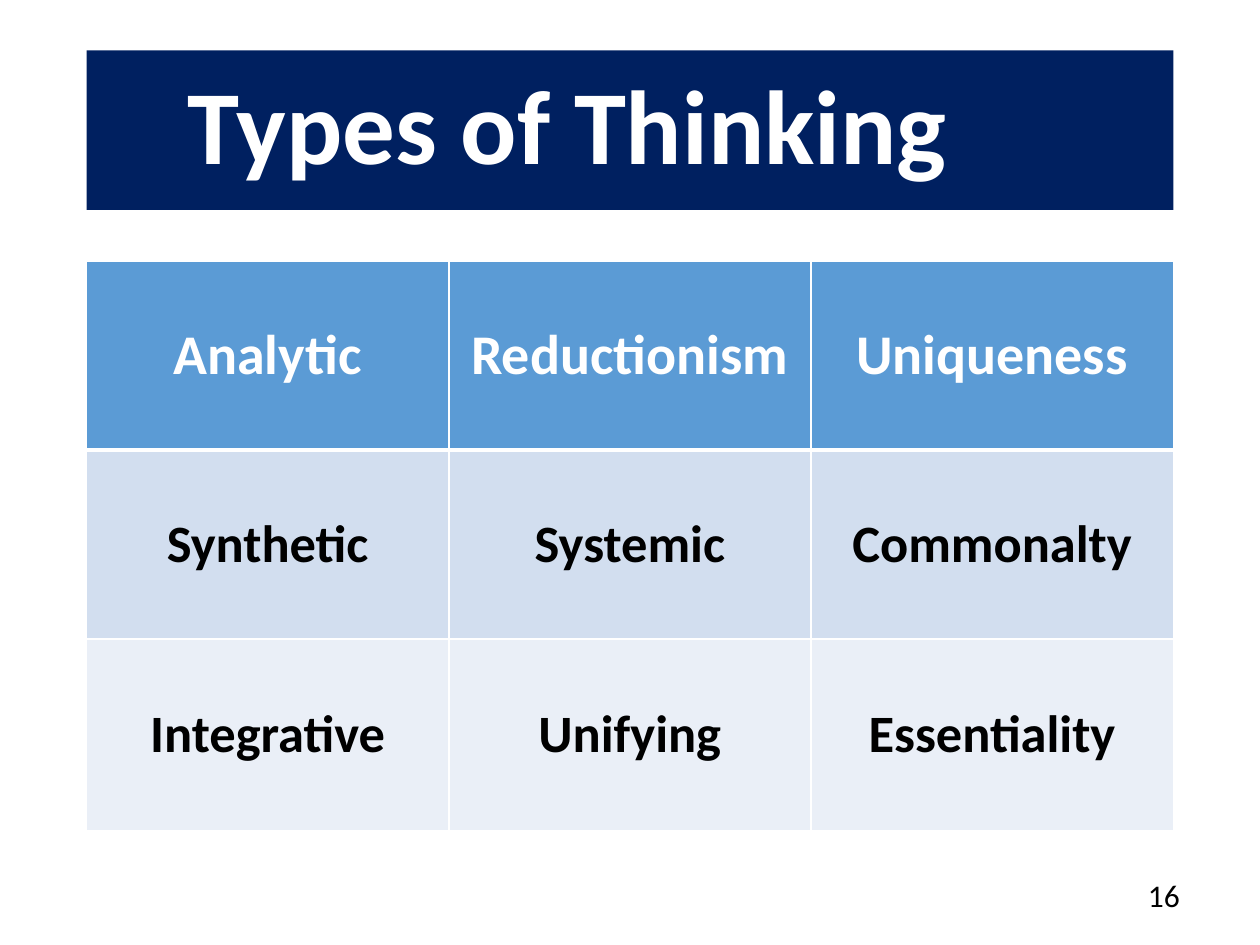
from lxml.etree import SubElement
from pptx import Presentation
from pptx.dml.color import RGBColor
from pptx.enum.shapes import MSO_SHAPE
from pptx.enum.text import MSO_ANCHOR, PP_ALIGN
from pptx.oxml.ns import qn
from pptx.util import Pt

TITLE = "Types of Thinking"
ROWS = [
    ("Analytic", "Reductionism", "Uniqueness"),
    ("Synthetic", "Systemic", "Commonalty"),
    ("Integrative", "Unifying", "Essentiality"),
]
PAGE_NUMBER = "16"

FONT = "Calibri"
NAVY = RGBColor(0x00, 0x20, 0x60)
BLUE = RGBColor(0x5B, 0x9B, 0xD5)
LIGHT_BLUE = RGBColor(0xD2, 0xDE, 0xEF)
PALE_BLUE = RGBColor(0xEA, 0xEF, 0xF7)
WHITE = RGBColor(0xFF, 0xFF, 0xFF)
BLACK = RGBColor(0x00, 0x00, 0x00)

ROW_STYLES = [
    (108, BLUE, WHITE, 32, 3),
    (108, LIGHT_BLUE, BLACK, 30, 1),
    (109.5, PALE_BLUE, BLACK, 30, 1),
]
LEFT, WIDTH = 49.5, 621


def write(text_frame, text, size, color, bold, alignment):
    text_frame.text = text
    paragraph = text_frame.paragraphs[0]
    paragraph.alignment = alignment
    font = paragraph.runs[0].font
    font.name, font.size, font.bold = FONT, Pt(size), bold
    font.color.rgb = color


def add_border(cell, side, width):
    properties = cell._tc.get_or_add_tcPr()
    line = SubElement(properties, qn(f"a:{side}"), w=str(Pt(width)))
    fill = SubElement(line, qn("a:solidFill"))
    SubElement(fill, qn("a:srgbClr"), val=str(WHITE))


def add_title(slide):
    shape = slide.shapes.add_shape(
        MSO_SHAPE.RECTANGLE, Pt(LEFT), Pt(28.75), Pt(WIDTH), Pt(91.25))
    shape.shadow.inherit = False
    shape.fill.solid()
    shape.fill.fore_color.rgb = NAVY
    shape.line.fill.background()
    text_frame = shape.text_frame
    text_frame.word_wrap = True
    text_frame.vertical_anchor = MSO_ANCHOR.MIDDLE
    text_frame.margin_right = Pt(78.5)
    write(text_frame, TITLE, 60, WHITE, True, PP_ALIGN.CENTER)
    text_frame.paragraphs[0].line_spacing = 0.9


def add_thinking_table(slide):
    height = sum(style[0] for style in ROW_STYLES)
    table = slide.shapes.add_table(
        len(ROWS), len(ROWS[0]), Pt(LEFT), Pt(149.25), Pt(WIDTH), Pt(height)).table
    top_border = 1
    for row, labels, style in zip(table.rows, ROWS, ROW_STYLES):
        row_height, fill, color, size, bottom_border = style
        row.height = Pt(row_height)
        borders = {"lnL": 1, "lnR": 1, "lnT": top_border, "lnB": bottom_border}
        for cell, label in zip(row.cells, labels):
            cell.vertical_anchor = MSO_ANCHOR.MIDDLE
            cell.margin_left = cell.margin_right = Pt(5)
            cell.margin_top = cell.margin_bottom = Pt(2.75)
            write(cell.text_frame, label, size, color, True, PP_ALIGN.CENTER)
            for side, width in borders.items():
                add_border(cell, side, width)
            cell.fill.solid()
            cell.fill.fore_color.rgb = fill
        top_border = bottom_border


def add_page_number(slide):
    box = slide.shapes.add_textbox(Pt(543.75), Pt(496.75), Pt(137.5), Pt(29))
    box.text_frame.word_wrap = True
    write(box.text_frame, PAGE_NUMBER, 18, BLACK, False, PP_ALIGN.RIGHT)


def main():
    presentation = Presentation()
    presentation.slide_width, presentation.slide_height = Pt(720), Pt(540)
    slide = presentation.slides.add_slide(presentation.slide_layouts[6])
    add_title(slide)
    add_thinking_table(slide)
    add_page_number(slide)
    presentation.save("out.pptx")


if __name__ == "__main__":
    main()
